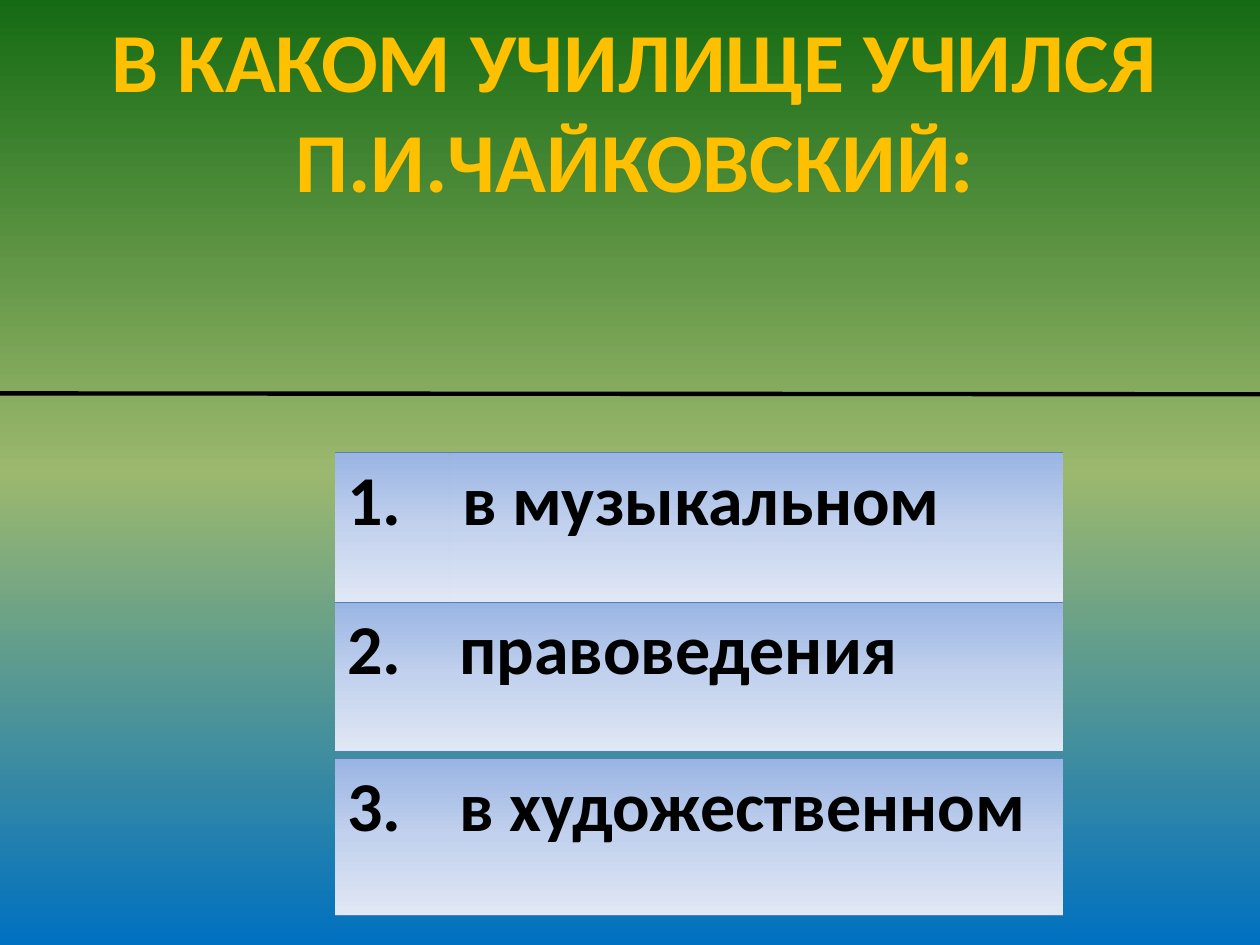
from dataclasses import dataclass

from lxml.etree import SubElement
from pptx import Presentation
from pptx.dml.color import RGBColor
from pptx.enum.shapes import MSO_CONNECTOR as Connector
from pptx.enum.text import MSO_ANCHOR as Anchor, MSO_AUTO_SIZE as AutoSize, PP_ALIGN as Align
from pptx.oxml import parse_xml
from pptx.oxml.ns import nsdecls, qn
from pptx.util import Pt


@dataclass(frozen=True)
class Theme:
    font: str = "Calibri"
    title_size: float = 48
    answer_size: float = 40
    title: str = "FFC000"
    title_outline: str = "F79646"
    text: str = "000000"
    border: str = "4F81BD"
    sky: tuple = ((0, "0070C0"), (50, "9CB86E"), (100, "156B13"))
    panel: tuple = ((0, "9AB5E4"), (50, "C2D1ED"), (100, "E1E8F5"))


NO_TABLE_STYLE = "{2D5ABB26-0587-4C30-8999-92F81FD0307C}"


def line_xml(tag, color, width):
    return parse_xml(
        f'<a:{tag} {nsdecls("a")} w="{int(Pt(width))}"><a:solidFill>'
        f'<a:srgbClr val="{color}"/></a:solidFill></a:{tag}>')


def set_gradient(fill, owner, stops, angle):
    """Fill with any number of stops; the angle runs clockwise."""
    fill.gradient()
    gradient = owner.xpath(".//a:gradFill")[0]
    for child in list(gradient):
        gradient.remove(child)
    stop_list = SubElement(gradient, qn("a:gsLst"))
    for position, color in stops:
        stop = SubElement(stop_list, qn("a:gs"), pos=str(position * 1000))
        SubElement(stop, qn("a:srgbClr"), val=color)
    SubElement(gradient, qn("a:lin"), ang=str(angle * 60000), scaled="0")


class SlideBuilder:
    def __init__(self, presentation, theme):
        self.theme = theme
        self.slide = presentation.slides.add_slide(presentation.slide_layouts[5])

    def background(self):
        set_gradient(self.slide.background.fill, self.slide.element, self.theme.sky, 270)

    def add_text(self, frame, text, size, color):
        paragraph = frame.paragraphs[0]
        run = paragraph.add_run()
        run.text = text
        for name, value in {"name": self.theme.font, "size": Pt(size), "bold": True}.items():
            setattr(run.font, name, value)
        run.font.color.rgb = RGBColor.from_string(color)
        return paragraph, run

    def title(self, text, left, top, width, height):
        shape = self.slide.shapes.title
        place = {"left": left, "top": top, "width": width, "height": height}
        for name, value in place.items():
            setattr(shape, name, Pt(value))
        frame = shape.text_frame
        layout = {"word_wrap": True, "auto_size": AutoSize.NONE,
                  "vertical_anchor": Anchor.MIDDLE}
        for name, value in layout.items():
            setattr(frame, name, value)
        paragraph, run = self.add_text(frame, text, self.theme.title_size, self.theme.title)
        paragraph.alignment = Align.CENTER
        outline = line_xml("ln", self.theme.title_outline, 0.75)
        run._r.get_or_add_rPr().insert(0, outline)

    def answer(self, texts, left, top, widths, height):
        table = self.slide.shapes.add_table(
            1, len(texts), Pt(left), Pt(top), Pt(sum(widths)), Pt(height)).table
        table.first_row = table.horz_banding = False
        table._tbl.tblPr.find(qn("a:tableStyleId")).text = NO_TABLE_STYLE
        for column, (text, width) in enumerate(zip(texts, widths)):
            table.columns[column].width = Pt(width)
            cell = table.cell(0, column)
            self.add_text(cell.text_frame, text, self.theme.answer_size, self.theme.text)
            properties = cell._tc.get_or_add_tcPr()
            set_gradient(cell.fill, properties, self.theme.panel, 90)
            # Borders come before the fill: top, then bottom
            for index, side in enumerate(("lnT", "lnB")):
                properties.insert(index, line_xml(side, self.theme.border, 1))

    def line(self, start, end, width):
        connector = self.slide.shapes.add_connector(
            Connector.STRAIGHT, *(Pt(value) for value in (*start, *end)))
        connector.line.color.rgb = RGBColor.from_string(self.theme.text)
        connector.line.width = Pt(width)
        SubElement(connector._element.spPr, qn("a:effectLst"))


def main():
    presentation = Presentation()
    presentation.slide_width, presentation.slide_height = Pt(720), Pt(540)
    builder = SlideBuilder(presentation, Theme())

    # Background and question
    builder.background()
    builder.title("В КАКОМ УЧИЛИЩЕ УЧИЛСЯ П.И.ЧАЙКОВСКИЙ:", 28.1, 11.5, 669.6, 101.5)

    # Answers: number, text, top, height, number column width
    answers_left, answers_width = 191.3, 416.2
    answers = [
        ("2.", "правоведения", 343.8, 85.5, 64),
        ("3.", "в художественном", 433.4, 89.8, 64),
        ("1.", "в музыкальном", 258.7, 85.5, 65.6),
    ]
    for number, text, top, height, number_width in answers:
        builder.answer((number, text), answers_left, top,
                       (number_width, answers_width - number_width), height)

    # Divider between question and answers
    builder.line((0, 224.8), (720, 225.3), 2.5)

    presentation.save("out.pptx")


if __name__ == "__main__":
    main()
